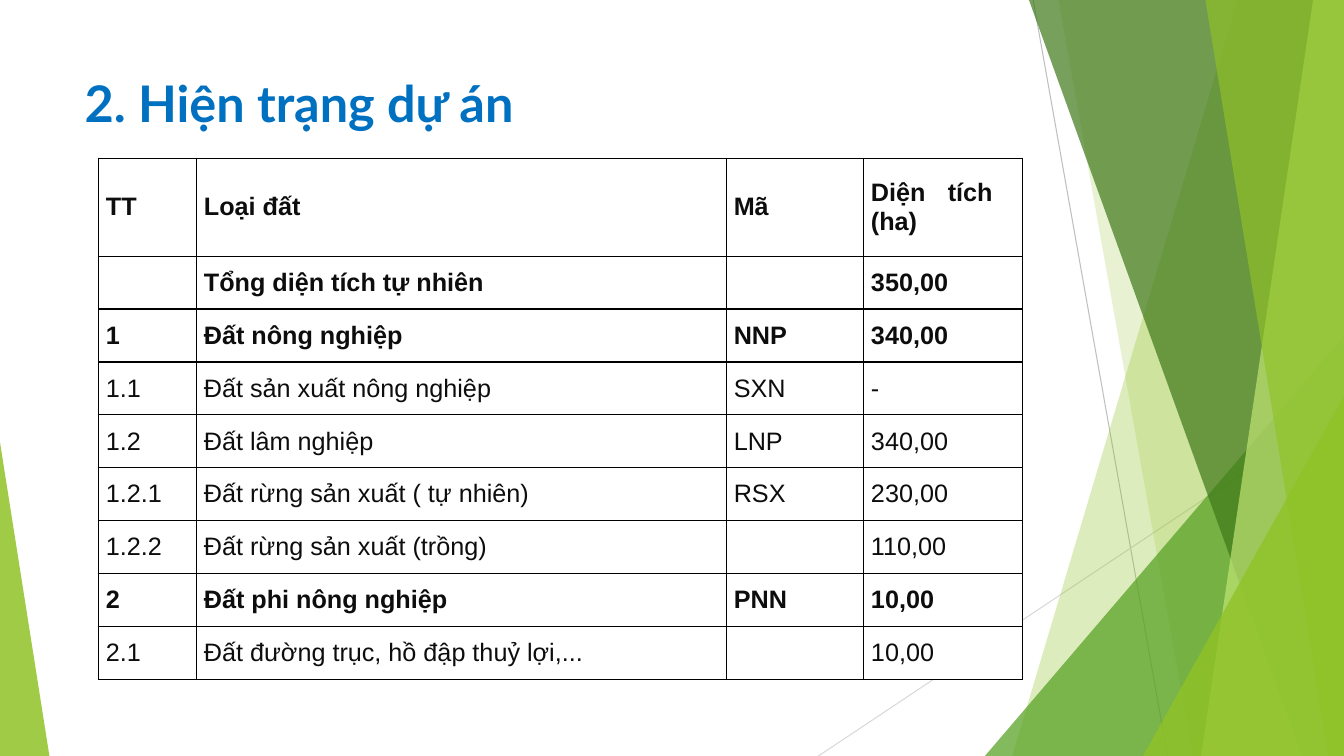
from collections import namedtuple

from lxml.etree import SubElement
from pptx import Presentation
from pptx.dml.color import RGBColor
from pptx.enum.shapes import MSO_CONNECTOR, MSO_SHAPE
from pptx.enum.text import MSO_ANCHOR, PP_ALIGN
from pptx.oxml.ns import qn
from pptx.util import Pt

Box = namedtuple("Box", "left top width height")

COLORS = {
    "white": "FFFFFF", "black": "000000", "text": "0D0D0D", "title": "0070C0",
    "lime": "90C226", "green": "54A021", "forest": "3F7819", "pale": "C0E474",
    "gray": "BFBFBF", "light gray": "D9D9D9",
}

COLUMN_WIDTHS = [70, 378.5, 98, 113.5]
HEADER_HEIGHT, ROW_HEIGHT = 70, 37.8
ROWS = [
    ["TT", "Loại đất ", "Mã", "Diện tích \n(ha)"],
    ["", "Tổng diện tích tự nhiên", "", "350,00"],
    ["1", "Đất nông nghiệp", "NNP", "340,00"],
    ["1.1", "Đất sản xuất nông nghiệp", "SXN", "-"],
    ["1.2", "Đất lâm nghiệp", "LNP", "340,00"],
    ["1.2.1", "Đất rừng sản xuất ( tự nhiên)", "RSX", "230,00"],
    ["1.2.2", "Đất rừng sản xuất (trồng)", "", "110,00"],
    ["2", "Đất phi nông nghiệp", "PNN", "10,00"],
    ["2.1", "Đất đường trục, hồ đập thuỷ lợi,...", "", "10,00"],
]


def color(name):
    return RGBColor.from_string(COLORS[name])


def paint(shape, fill, opacity):
    """Fill a shape with a see-through colour, without outline or shadow."""
    shape.shadow.inherit = False
    shape.line.fill.background()
    shape.fill.solid()
    shape.fill.fore_color.rgb = color(fill)
    srgb = shape.fill._xPr.find(".//" + qn("a:srgbClr"))
    SubElement(srgb, qn("a:alpha"), val=str(opacity * 1000))


def add_line(page, start, end, line_color):
    line = page.shapes.add_connector(
        MSO_CONNECTOR.STRAIGHT, *[Pt(value) for value in start + end])
    line.line.color.rgb = color(line_color)
    line.line.width = Pt(0.75)
    SubElement(line._element.spPr, qn("a:effectLst"))


def add_shard(page, box, top_x, bottom_x, fill, opacity):
    """Fill from a slanted left edge to the right side of the box."""
    right, bottom = box.left + box.width, box.top + box.height
    builder = page.shapes.build_freeform(box.left + top_x, box.top, scale=Pt(1))
    builder.add_line_segments(
        [(right, box.top), (right, bottom), (box.left + bottom_x, bottom)])
    paint(builder.convert_to_shape(), fill, opacity)


def add_corner(page, box, width, height, fill, opacity, at_right=True):
    """Place a right-angled triangle in a lower corner of the box."""
    left = box.left + (box.width - width if at_right else 0)
    top = box.top + box.height - height
    corner = page.shapes.add_shape(
        MSO_SHAPE.ISOSCELES_TRIANGLE, Pt(left), Pt(top), Pt(width), Pt(height))
    corner.adjustments[0] = 1 if at_right else 0
    paint(corner, fill, opacity)


def add_backdrop(page, box):
    right, bottom = box.left + box.width, box.top + box.height
    add_line(page, (box.left + 738, box.top), (box.left + 834, bottom), "gray")
    add_line(page, (right, box.top + 290), (box.left + 584.6, bottom), "light gray")
    add_shard(page, box, 884, 723, "lime", 30)
    add_shard(page, box, 756, 852, "lime", 20)
    add_corner(page, box, 256.5, 300, "green", 72)
    add_shard(page, box, 735, 929.5, "forest", 70)
    add_shard(page, box, 938, 858, "pale", 70)
    add_shard(page, box, 861, 949, "lime", 65)
    add_corner(page, box, 143.5, 257, "lime", 80)
    add_corner(page, box, 35.3, 224, "lime", 85, at_right=False)


def add_title(page, box, text):
    title = page.shapes.title
    title.left, title.top, title.width, title.height = [Pt(value) for value in box]
    frame = title.text_frame
    frame.word_wrap = True
    frame.vertical_anchor = MSO_ANCHOR.TOP
    para = frame.paragraphs[0]
    para.alignment = PP_ALIGN.LEFT
    span = para.add_run()
    span.text = text
    span.font.name, span.font.size, span.font.bold = "Lato", Pt(36), True
    span.font.color.rgb = color("title")


def add_borders(cell):
    properties = cell._tc.get_or_add_tcPr()
    for position, side in enumerate(("lnL", "lnR", "lnT", "lnB")):
        border = SubElement(properties, qn(f"a:{side}"), w=str(Pt(1)))
        fill = SubElement(border, qn("a:solidFill"))
        SubElement(fill, qn("a:srgbClr"), val=COLORS["black"])
        properties.insert(position, border)


def fill_cell(cell, text, bold):
    cell.fill.solid()
    cell.fill.fore_color.rgb = color("white")
    add_borders(cell)
    cell.vertical_anchor = MSO_ANCHOR.MIDDLE
    cell.margin_left = cell.margin_right = Pt(5.4)
    cell.margin_top = cell.margin_bottom = 0
    if not text:
        return
    para = cell.text_frame.paragraphs[0]
    para.alignment = PP_ALIGN.JUSTIFY
    for number, line in enumerate(text.split("\n")):
        if number:
            para.add_line_break()
        span = para.add_run()
        span.text = line
        span.font.name, span.font.size, span.font.bold = "Arial", Pt(18), bold
        span.font.color.rgb = color("text")


def add_land_table(page, box):
    frame = page.shapes.add_table(
        len(ROWS), len(COLUMN_WIDTHS), *[Pt(value) for value in box])
    table = frame.table
    table.horz_banding = False
    for column, width in zip(table.columns, COLUMN_WIDTHS):
        column.width = Pt(width)
    for index, texts in enumerate(ROWS):
        table.rows[index].height = Pt(ROW_HEIGHT if index else HEADER_HEIGHT)
        bold = "." not in texts[0]
        for cell, text in zip(table.rows[index].cells, texts):
            fill_cell(cell, text, bold)


def main():
    deck = Presentation()
    deck.slide_width, deck.slide_height = Pt(960), Pt(540)
    page = deck.slides.add_slide(deck.slide_layouts[5])
    add_backdrop(page, Box(0, 0, 960, 540))
    add_title(page, Box(53.3, 48.2, 676.8, 65.5), "2. Hiện trạng dự án")
    table_height = HEADER_HEIGHT + ROW_HEIGHT * (len(ROWS) - 1)
    add_land_table(page, Box(70.3, 113, sum(COLUMN_WIDTHS), table_height))
    deck.save("out.pptx")


if __name__ == "__main__":
    main()
